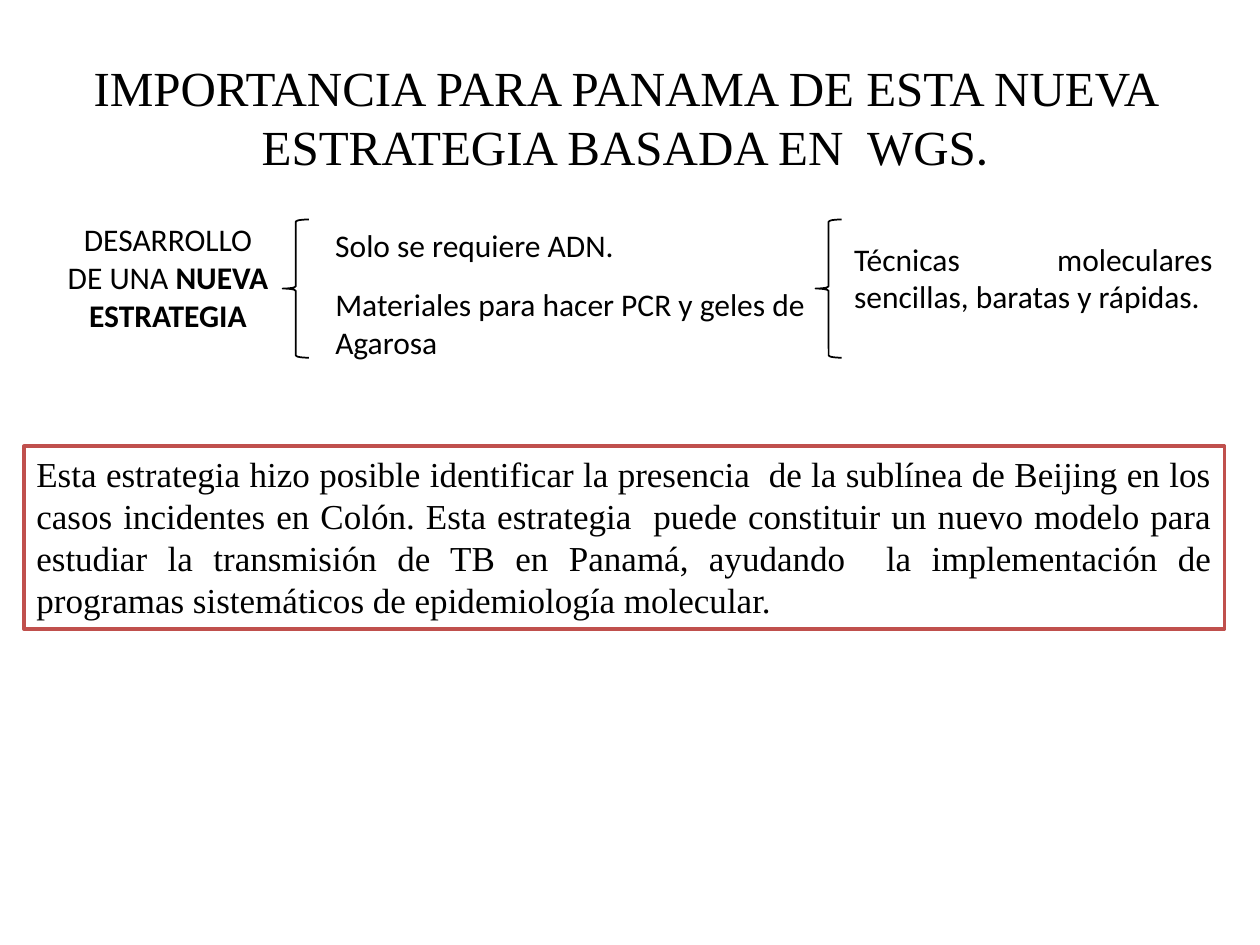
import pptx
import pptx.dml.color
import pptx.enum.shapes
import pptx.enum.text
import pptx.util

Pt = pptx.util.Pt
ALIGN = pptx.enum.text.PP_ALIGN
ANCHOR = pptx.enum.text.MSO_ANCHOR
SHAPE = pptx.enum.shapes.MSO_SHAPE
COLORS = {"text": "000000", "brace": "000000", "panel": "FFFFFF", "border": "C0504D"}
SERIF, SANS = "Times New Roman", "Calibri"


def color(name):
    return pptx.dml.color.RGBColor.from_string(COLORS[name])


def write_text(shape, runs, size, align=ALIGN.LEFT, anchor=ANCHOR.TOP):
    """Fill a shape with one paragraph of (text, font name, bold) runs."""
    frame = shape.text_frame
    frame.word_wrap = True
    frame.vertical_anchor = anchor
    paragraph = frame.paragraphs[0]
    paragraph.alignment = align
    for text, font_name, bold in runs:
        run = paragraph.add_run()
        run.text = text
        font_format = {"name": font_name, "size": Pt(size), "bold": bold}
        for attribute, value in font_format.items():
            setattr(run.font, attribute, value)
        run.font.color.rgb = color("text")


def add_text(slide, left, top, width, height, runs, size, **layout):
    box = slide.shapes.add_textbox(Pt(left), Pt(top), Pt(width), Pt(height))
    write_text(box, runs, size, **layout)


def add_outlined(slide, kind, left, top, width, height, line_color, line_width):
    shape = slide.shapes.add_shape(kind, Pt(left), Pt(top), Pt(width), Pt(height))
    shape.shadow.inherit = False
    shape.fill.background()
    shape.line.color.rgb = color(line_color)
    shape.line.width = Pt(line_width)
    return shape


def add_title(slide, left, top, width, height):
    runs = [
        ("IMPORTANCIA PARA PANAMA DE ESTA NUEVA ESTRATEGIA BASADA EN  WGS", SERIF, False),
        (".", SANS, False),
    ]
    add_text(slide, left, top, width, height, runs, 28,
             align=ALIGN.CENTER, anchor=ANCHOR.MIDDLE)


def add_strategy_scheme(slide, left, top):
    """Strategy, its requirements and its advantages, parted by braces."""
    strategy = [("DESARROLLO DE UNA ", SANS, False), ("NUEVA ESTRATEGIA", SANS, True)]
    dna = [("Solo se requiere ADN.", SANS, False)]
    materials = [("Materiales para hacer PCR y geles de Agarosa", SANS, False)]
    techniques = [("Técnicas moleculares sencillas, baratas y rápidas.", SANS, False)]
    entries = [
        (0, 0, 130, 73, strategy, ALIGN.CENTER),
        (153.5, 3, 329, 29, dna, ALIGN.LEFT),
        (153.5, 37, 289.5, 51, materials, ALIGN.LEFT),
        (450, 11, 219, 51, techniques, ALIGN.JUSTIFY),
    ]
    for x, y, width, height, runs, align in entries:
        add_text(slide, left + x, top + y, width, height, runs, 18, align=align)
    for x in (130.5, 435):
        add_outlined(slide, SHAPE.LEFT_BRACE, left + x, top + 3, 15, 79, "brace", 1)


def add_conclusion(slide, left, top, width, height):
    panel = add_outlined(slide, SHAPE.RECTANGLE, left, top, width, height, "border", 2)
    panel.fill.solid()
    panel.fill.fore_color.rgb = color("panel")
    text = (
        "Esta estrategia hizo posible identificar la presencia  de la sublínea de "
        "Beijing en los casos incidentes en Colón. Esta estrategia  puede constituir "
        "un nuevo modelo para estudiar la transmisión de TB en Panamá, ayudando  la "
        "implementación de programas sistemáticos de epidemiología molecular."
    )
    write_text(panel, [(text, SERIF, False)], 20, align=ALIGN.JUSTIFY)


def main():
    presentation = pptx.Presentation()
    presentation.slide_width, presentation.slide_height = Pt(720), Pt(540)
    slide = presentation.slides.add_slide(presentation.slide_layouts[6])
    add_title(slide, 14.4, 21.6, 685.4, 90)
    add_strategy_scheme(slide, 31, 122.4)
    add_conclusion(slide, 13.7, 255, 686, 104.4)
    presentation.save("out.pptx")


if __name__ == "__main__":
    main()
